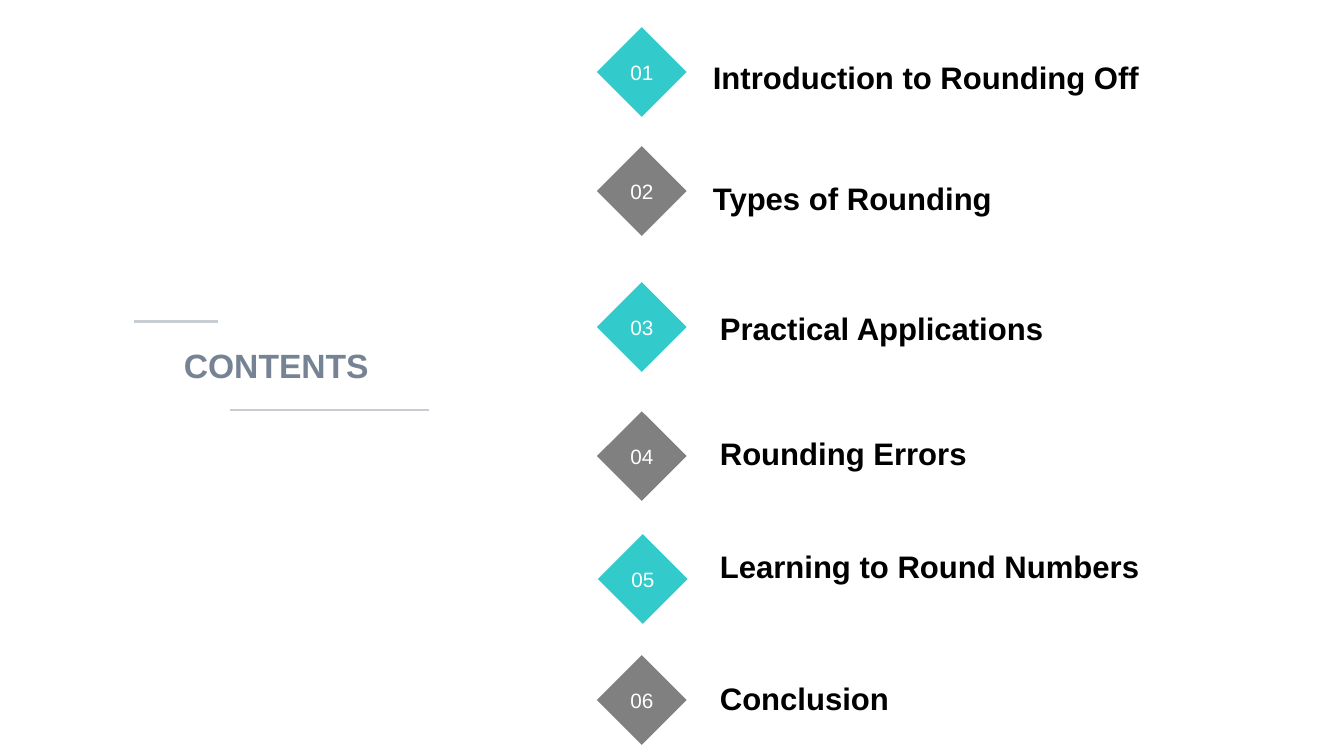
from lxml import etree
from pptx import Presentation
from pptx.dml.color import RGBColor
from pptx.enum import shapes, text
from pptx.oxml import ns
from pptx.util import Inches, Pt

TEAL = RGBColor(0x32, 0xCA, 0xCB)
GRAY = RGBColor(0x80, 0x80, 0x80)
SLATE = RGBColor(0x76, 0x83, 0x94)
RULE = RGBColor(0xC8, 0xCD, 0xD4)
WHITE = RGBColor(0xFF, 0xFF, 0xFF)
BLACK = RGBColor(0x00, 0x00, 0x00)

DIAMOND_SIZE = 0.89
CHAPTERS = [
    ("Introduction to Rounding Off", (0, 0), (1.07, 0.32)),
    ("Types of Rounding", (0, 1.18), (1.07, 1.52)),
    ("Practical Applications", (0, 2.53), (1.14, 2.81)),
    ("Rounding Errors", (0, 3.81), (1.14, 4.05)),
    ("Learning to Round Numbers", (0.01, 5.03), (1.14, 5.17)),
    ("Conclusion", (0, 6.23), (1.14, 6.48)),
]


def write(holder, content, *, size, color, bold=False, align=text.PP_ALIGN.LEFT,
          anchor=text.MSO_ANCHOR.MIDDLE, inset=(0, 0)):
    """Put formatted text in a shape, with (horizontal, vertical) insets in inches."""
    frame = holder.text_frame
    frame.word_wrap = True
    frame.auto_size = text.MSO_AUTO_SIZE.NONE
    frame.vertical_anchor = anchor
    frame.margin_left = frame.margin_right = Inches(inset[0])
    frame.margin_top = frame.margin_bottom = Inches(inset[1])
    paragraph = frame.paragraphs[0]
    paragraph.alignment = align
    run = paragraph.add_run()
    run.text = content
    run.font.name = "Arial"
    run.font.size = Pt(size)
    run.font.bold = bold
    run.font.color.rgb = color


def add_rule(slide, start, end, y):
    """Draw a thin horizontal rule."""
    rule = slide.shapes.add_connector(
        shapes.MSO_CONNECTOR.STRAIGHT, Inches(start), Inches(y), Inches(end), Inches(y))
    rule.line.color.rgb = RULE
    rule.line.width = Pt(1.75)
    etree.SubElement(rule._element.spPr, ns.qn("a:effectLst"))


def add_heading(slide, left, top, width, height):
    """Place the title between its two offset rules."""
    heading = slide.shapes.title
    heading.left, heading.top = Inches(left + 0.32), Inches(top + 0.15)
    heading.width, heading.height = Inches(2.18), Inches(0.58)
    write(heading, "CONTENTS", size=24, color=SLATE, bold=True,
          align=text.PP_ALIGN.CENTER, anchor=text.MSO_ANCHOR.TOP, inset=(0.1, 0.08))
    add_rule(slide, left + 0.83, left, top)
    add_rule(slide, left + 0.95, left + width, top + height)


def add_chapters(slide, left, top, label_width):
    """Place the numbered diamonds and their chapter labels."""
    for number, (chapter, (dx, dy), (label_dx, label_dy)) in enumerate(CHAPTERS, 1):
        diamond = slide.shapes.add_shape(
            shapes.MSO_SHAPE.DIAMOND, Inches(left + dx), Inches(top + dy),
            Inches(DIAMOND_SIZE), Inches(DIAMOND_SIZE))
        diamond.shadow.inherit = False
        diamond.fill.solid()
        diamond.fill.fore_color.rgb = TEAL if number % 2 else GRAY
        diamond.line.fill.background()
        write(diamond, f"{number:02}", size=14.8, color=WHITE, align=text.PP_ALIGN.CENTER)
        label = slide.shapes.add_textbox(
            Inches(left + label_dx), Inches(top + label_dy), Inches(label_width), Inches(0.4))
        write(label, chapter, size=22.2, color=BLACK, bold=True,
              anchor=text.MSO_ANCHOR.BOTTOM, inset=(0.08, 0.04))


def main():
    """Build and save the contents slide."""
    deck = Presentation()
    deck.slide_width, deck.slide_height = Inches(13.33), Inches(7.5)
    slide = deck.slides.add_slide(deck.slide_layouts.get_by_name("Title Only"))
    add_heading(slide, 1.33, 3.19, 2.92, 0.88)
    add_chapters(slide, 5.92, 0.27, 5.61)
    deck.save("out.pptx")


if __name__ == "__main__":
    main()
